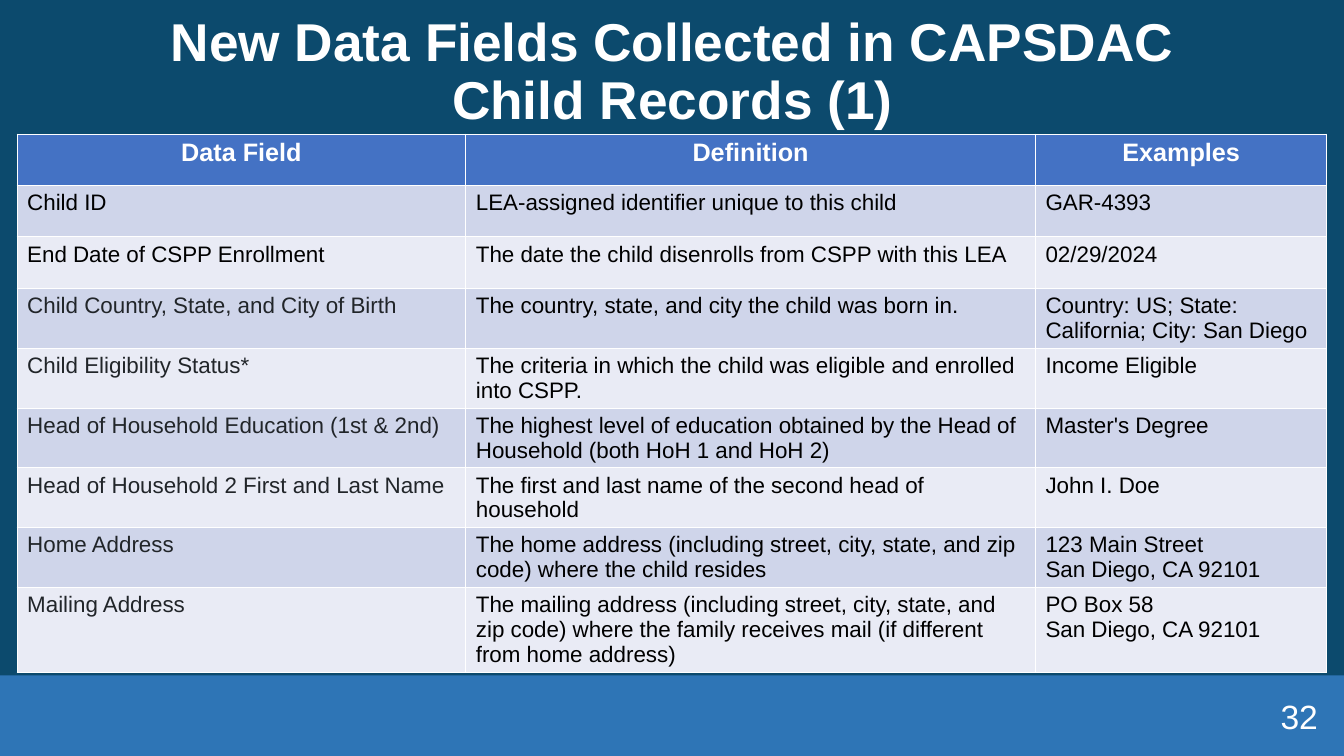
from lxml.etree import SubElement
from pptx import Presentation
from pptx.dml.color import RGBColor
from pptx.enum.shapes import MSO_SHAPE
from pptx.enum.text import MSO_ANCHOR, PP_ALIGN
from pptx.oxml.ns import qn
from pptx.util import Inches, Pt

NAVY = RGBColor(0x0C, 0x4A, 0x6D)
BAND_BLUE = RGBColor(0x2E, 0x75, 0xB6)
HEADER_BLUE = RGBColor(0x44, 0x72, 0xC4)
ROW_DARK = RGBColor(0xCF, 0xD5, 0xEA)
ROW_LIGHT = RGBColor(0xE9, 0xEB, 0xF5)
WHITE = RGBColor(0xFF, 0xFF, 0xFF)
BLACK = RGBColor(0x00, 0x00, 0x00)
CHARCOAL = RGBColor(0x21, 0x25, 0x29)

TITLE_LINES = ["New Data Fields Collected in CAPSDAC", "Child Records (1)"]
COLUMN_WIDTHS = [4.45, 5.65, 2.89]
ROW_HEIGHTS = [0.51] * 5 + [0.54] * 4
ROWS = [
    ("Data Field", "Definition", "Examples"),
    ("Child ID", "LEA-assigned identifier unique to this child", "GAR-4393"),
    ("End Date of CSPP Enrollment",
     "The date the child disenrolls from CSPP with this LEA", "02/29/2024"),
    ("Child Country, State, and City of Birth",
     "The country, state, and city the child was born in.",
     "Country: US; State: California; City: San Diego"),
    ("Child Eligibility Status*",
     "The criteria in which the child was eligible and enrolled into CSPP.",
     "Income Eligible"),
    ("Head of Household Education (1st & 2nd)",
     "The highest level of education obtained by the Head of Household "
     "(both HoH 1 and HoH 2)", "Master's Degree"),
    ("Head of Household 2 First and Last Name",
     "The first and last name of the second head of household", "John I. Doe"),
    ("Home Address",
     "The home address (including street, city, state, and zip code) "
     "where the child resides", "123 Main Street\nSan Diego, CA 92101"),
    ("Mailing Address",
     "The mailing address (including street, city, state, and zip code) "
     "where the family receives mail (if different from home address)",
     "PO Box 58\nSan Diego, CA 92101"),
]


class SlideBuilder:
    """Holds the shared style and the current slide."""

    font_name = "Arial"

    def __init__(self, slide):
        self.slide = slide

    def format_font(self, font, color, **values):
        for name, value in {"name": self.font_name, "bold": False, **values}.items():
            setattr(font, name, value)
        font.color.rgb = color

    def background(self, color):
        fill = self.slide.background.fill
        fill.solid()
        fill.fore_color.rgb = color

    def band(self, left, top, width, height, color):
        shape = self.slide.shapes.add_shape(
            MSO_SHAPE.RECTANGLE, Inches(left), Inches(top), Inches(width), Inches(height))
        shape.shadow.inherit = False
        shape.fill.solid()
        shape.fill.fore_color.rgb = color
        shape.line.fill.background()

    def title(self, lines, left, top, width, height):
        shape = self.slide.shapes.title
        box = {"left": left, "top": top, "width": width, "height": height}
        for name, value in box.items():
            setattr(shape, name, Inches(value))
        shape.text_frame.vertical_anchor = MSO_ANCHOR.MIDDLE
        paragraph = shape.text_frame.paragraphs[0]
        paragraph.alignment = PP_ALIGN.CENTER
        paragraph.line_spacing = 0.9
        for index, line in enumerate(lines):
            if index:
                paragraph.add_line_break()
            run = paragraph.add_run()
            run.text = line
            self.format_font(run.font, WHITE, size=Pt(38), bold=True)

    def text(self, text, left, top, width, height, size):
        shape = self.slide.shapes.add_textbox(
            Inches(left), Inches(top), Inches(width), Inches(height))
        frame = shape.text_frame
        frame.word_wrap = True
        frame.vertical_anchor = MSO_ANCHOR.MIDDLE
        frame.text = text
        frame.paragraphs[0].alignment = PP_ALIGN.RIGHT
        self.format_font(frame.paragraphs[0].runs[0].font, WHITE, size=Pt(size))

    def cell_borders(self, cell, color, width):
        properties = cell._tc.get_or_add_tcPr()
        for position, side in enumerate(("a:lnL", "a:lnR", "a:lnT", "a:lnB")):
            line = SubElement(properties, qn(side), w=str(Pt(width)))
            solid = SubElement(line, qn("a:solidFill"))
            SubElement(solid, qn("a:srgbClr"), val=str(color))
            # Border lines come before the cell fill
            properties.insert(position, line)

    def cell(self, cell, text, fill, color, alignment, **font_values):
        cell.fill.solid()
        cell.fill.fore_color.rgb = fill
        self.cell_borders(cell, WHITE, 0.75)
        cell.text = text
        for paragraph in cell.text_frame.paragraphs:
            paragraph.alignment = alignment
            for run in paragraph.runs:
                self.format_font(run.font, color, **font_values)

    def table(self, rows, left, top, column_widths, row_heights):
        table = self.slide.shapes.add_table(
            len(rows), len(column_widths), Inches(left), Inches(top),
            Inches(sum(column_widths)), Inches(sum(row_heights))).table
        for column, width in zip(table.columns, column_widths):
            column.width = Inches(width)
        for row, height in zip(table.rows, row_heights):
            row.height = Inches(height)
        for row_index, texts in enumerate(rows):
            for column_index, text in enumerate(texts):
                cell = table.cell(row_index, column_index)
                if row_index == 0:
                    self.cell(cell, text, HEADER_BLUE, WHITE, PP_ALIGN.CENTER,
                              size=Pt(18), bold=True)
                    continue
                fill = ROW_DARK if row_index % 2 else ROW_LIGHT
                # Field names from the third record on are charcoal
                color = CHARCOAL if column_index == 0 and row_index > 2 else BLACK
                self.cell(cell, text, fill, color, PP_ALIGN.LEFT, size=Pt(16))


def main():
    presentation = Presentation()
    presentation.slide_width = Inches(13.33)
    presentation.slide_height = Inches(7.5)
    slide = presentation.slides.add_slide(presentation.slide_layouts[5])
    builder = SlideBuilder(slide)

    # Backdrop and footer band
    builder.background(NAVY)
    builder.band(0, 6.7, 13.33, 0.8, BAND_BLUE)

    # Title
    builder.title(TITLE_LINES, 0.17, 0, 13, 1.45)

    # Data fields
    builder.table(ROWS, 0.17, 1.33, COLUMN_WIDTHS, ROW_HEIGHTS)

    # Slide number
    builder.text("32", 10.17, 6.9, 3, 0.4, 24)

    presentation.save("out.pptx")


if __name__ == "__main__":
    main()
